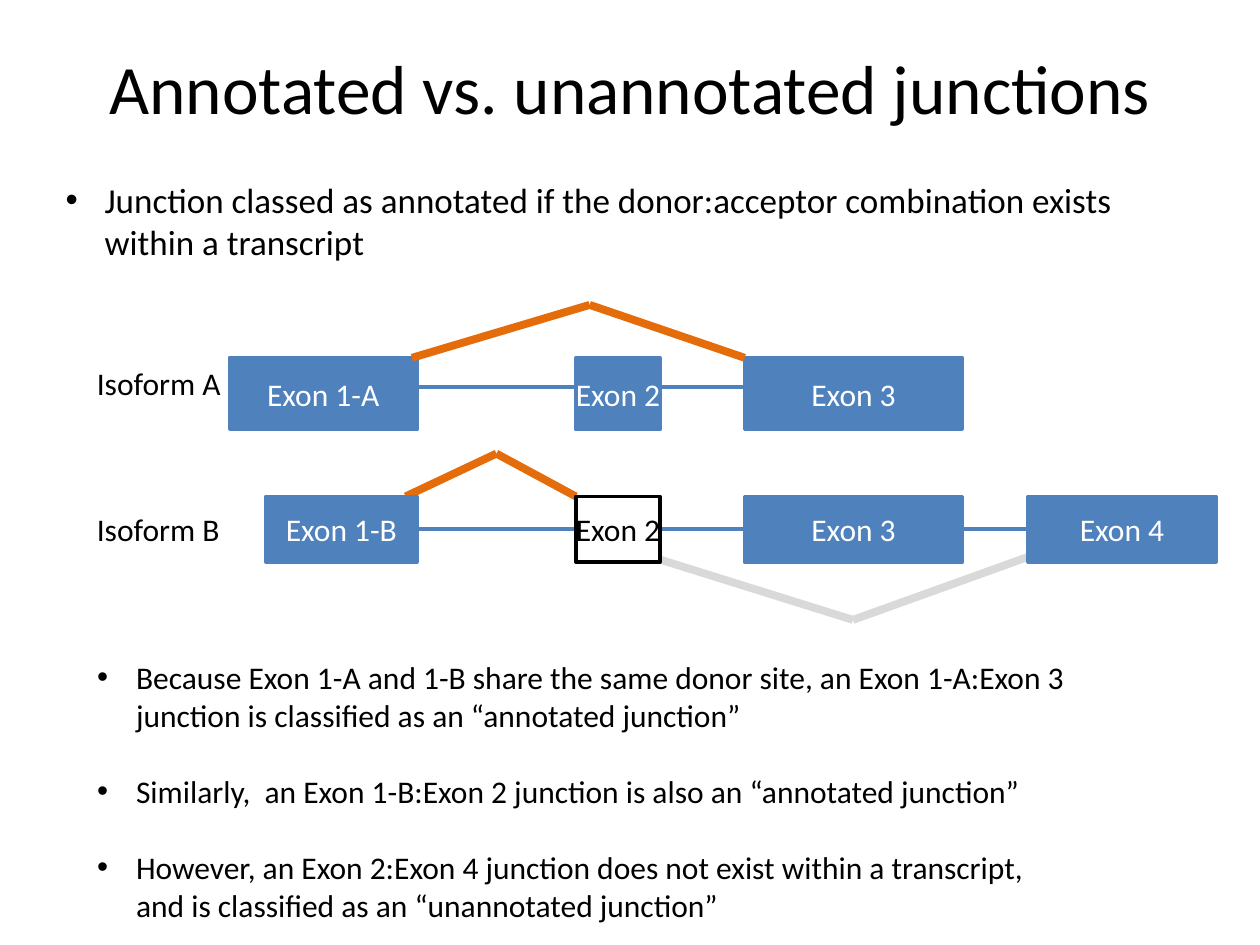
from lxml.etree import SubElement
from pptx import Presentation
from pptx.dml.color import RGBColor
from pptx.enum.shapes import MSO_CONNECTOR as Connector, MSO_SHAPE as Shape
from pptx.enum.text import MSO_ANCHOR as Anchor, MSO_AUTO_SIZE as AutoSize, PP_ALIGN as Align
from pptx.oxml.ns import qn
from pptx.util import Inches, Pt

BLACK = RGBColor(0x00, 0x00, 0x00)
WHITE = RGBColor(0xFF, 0xFF, 0xFF)
BLUE = RGBColor(0x4F, 0x81, 0xBD)
ORANGE = RGBColor(0xE4, 0x6C, 0x0A)
GREY = RGBColor(0xD9, 0xD9, 0xD9)
FONT = "Calibri"

TITLE = "Annotated vs. unannotated junctions"
DEFINITION = ["Junction classed as annotated if the donor:acceptor combination exists within a transcript"]
EXAMPLES = [
    "Because Exon 1-A and 1-B share the same donor site, an Exon 1-A:Exon 3 junction is classified as an “annotated junction”",
    "Similarly,  an Exon 1-B:Exon 2 junction is also an “annotated junction”",
    "However, an Exon 2:Exon 4 junction does not exist within a transcript, and is classified as an “unannotated junction”",
]
EXON_2 = ("Exon 2", 4.57, 0.67, False)
EXON_3 = ("Exon 3", 5.91, 1.73, False)
ISOFORM_A = [("Exon 1-A", 1.82, 1.49, False), EXON_2, EXON_3]
ISOFORM_B = [("Exon 1-B", 2.11, 1.2, False), ("Exon 2", 4.57, 0.67, True), EXON_3,
             ("Exon 4", 8.16, 1.49, False)]


def place(part, left, top, width, height):
    part.left, part.top = Inches(left), Inches(top)
    part.width, part.height = Inches(width), Inches(height)


def style(paragraph, size, color):
    for run in paragraph.runs:
        run.font.name = FONT
        run.font.size = Pt(size)
        run.font.color.rgb = color


def add_title(title, box):
    place(title, *box)
    frame = title.text_frame
    frame.text = TITLE
    frame.auto_size = AutoSize.NONE
    frame.vertical_anchor = Anchor.MIDDLE
    heading = frame.paragraphs[0]
    heading.alignment = Align.CENTER
    style(heading, 39.6, BLACK)


def add_list(body, box, points, size, gap=0):
    place(body, *box)
    frame = body.text_frame
    frame.text = "\n".join(points)
    frame.auto_size = AutoSize.NONE
    frame.vertical_anchor = Anchor.TOP
    for index, point in enumerate(frame.paragraphs):
        point.space_before = Pt(gap if index else 0)
        indent = point._p.get_or_add_pPr()
        indent.set("marL", str(Inches(0.31)))
        indent.set("indent", str(-Inches(0.31)))
        SubElement(indent, qn("a:buFont")).set("typeface", "Arial")
        SubElement(indent, qn("a:buChar")).set("char", "•")
        style(point, size, BLACK)


def add_line(slide, start, end, color, weight):
    line = slide.shapes.add_connector(Connector.STRAIGHT, *map(Inches, start + end))
    line.line.color.rgb = color
    line.line.width = Pt(weight)
    SubElement(line._element.spPr, qn("a:effectLst"))


def add_junction(slide, donor, peak, acceptor, color):
    add_line(slide, donor, peak, color, 4.5)
    add_line(slide, peak, acceptor, color, 4.5)


def add_exon(slide, box, name, outlined):
    exon = slide.shapes.add_shape(Shape.RECTANGLE, *map(Inches, box))
    exon.shadow.inherit = False
    exon.fill.solid()
    exon.fill.fore_color.rgb = WHITE if outlined else BLUE
    exon.line.color.rgb = BLACK if outlined else BLUE
    exon.line.width = Pt(2)
    frame = exon.text_frame
    frame.text = name
    frame.word_wrap = False
    frame.vertical_anchor = Anchor.MIDDLE
    frame.paragraphs[0].alignment = Align.CENTER
    style(frame.paragraphs[0], 18, BLACK if outlined else WHITE)


def add_isoform(slide, name, name_top, top, height, intron_y, exons):
    label = slide.shapes.add_textbox(Inches(0.67), Inches(name_top), Inches(1.19), Inches(0.4))
    label.text_frame.text = name
    label.text_frame.word_wrap = False
    style(label.text_frame.paragraphs[0], 18, BLACK)
    last_left = exons[-1][1]
    add_line(slide, (3.02, intron_y), (last_left + 0.65, intron_y), BLUE, 2.25)
    for exon_name, left, width, outlined in exons:
        add_exon(slide, (left, top, width, height), exon_name, outlined)


def main():
    deck = Presentation()
    deck.slide_width, deck.slide_height = Inches(10), Inches(7.5)
    slide = deck.slides.add_slide(deck.slide_layouts[3])
    title, definition, examples = slide.placeholders

    add_title(title, (0.5, 0.3, 9, 0.78))
    add_list(definition, (0.42, 1.37, 8.66, 0.77), DEFINITION, 20)
    add_junction(slide, (5.17, 4.42), (6.77, 4.92), (8.16, 4.42), GREY)
    add_junction(slide, (3.22, 3.94), (3.94, 3.6), (4.57, 3.94), ORANGE)
    add_isoform(slide, "Isoform A", 2.84, 2.84, 0.57, 3.07, ISOFORM_A)
    add_isoform(slide, "Isoform B", 4, 3.94, 0.52, 4.2, ISOFORM_B)
    add_junction(slide, (3.27, 2.84), (4.68, 2.42), (5.91, 2.84), ORANGE)
    add_list(examples, (0.67, 5.17, 7.92, 2.52), EXAMPLES, 18, gap=22)

    deck.save("out.pptx")


if __name__ == "__main__":
    main()
